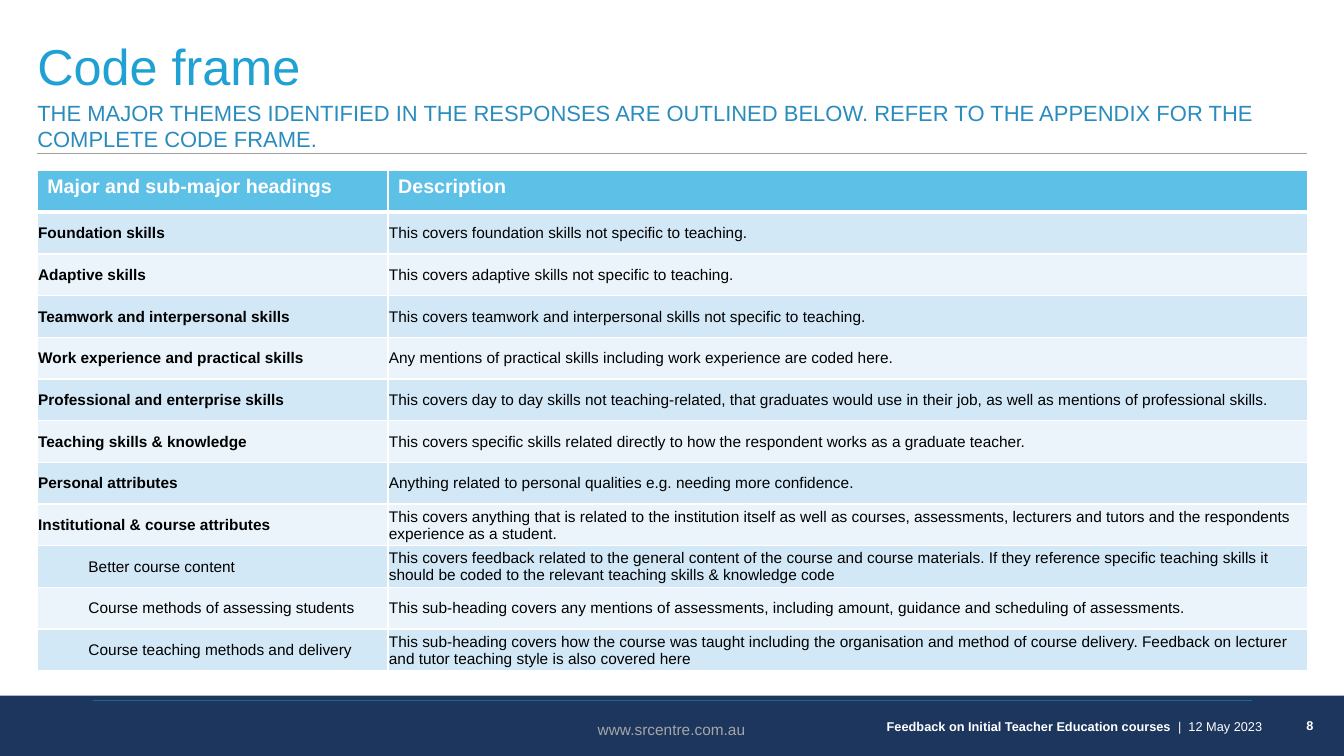
from dataclasses import dataclass

from lxml import etree
from pptx import Presentation
from pptx.dml.color import RGBColor
from pptx.enum import shapes, text
from pptx.oxml import ns
from pptx.util import Cm, Pt


@dataclass(frozen=True)
class Theme:
    font: str = "Arial"
    navy: str = "1C365E"
    teal: str = "156B8D"
    title: str = "1FA1D3"
    subtitle: str = "2A8CBE"
    header: str = "5CC0E7"
    bands: tuple[str, str] = ("D2E8F6", "EAF4FA")
    rule: str = "A0A0A0"
    web: str = "A6A6A6"
    white: str = "FFFFFF"
    black: str = "000000"
    title_pt: float = 36
    subtitle_pt: float = 15.7
    header_pt: float = 14
    body_pt: float = 11
    footer_pt: float = 9.1


@dataclass(frozen=True)
class Code:
    heading: str
    description: str
    sub: bool = False


@dataclass(frozen=True)
class Label:
    """Text box: position and size in cm, runs as (text, bold) pairs."""
    box: tuple[float, float, float, float]
    runs: tuple[tuple[str, bool], ...]
    size: float
    color: str
    align: text.PP_ALIGN = text.PP_ALIGN.LEFT
    anchor: text.MSO_ANCHOR = text.MSO_ANCHOR.MIDDLE
    inset: bool = False


@dataclass(frozen=True)
class Rule:
    left: float
    right: float
    y: float
    color: str


T = Theme()
LEFT, WIDTH = 0.94, 32.0
HEADING_WIDTH = 8.84
TABLE_TOP, ROW_HEIGHT = 4.3, 1.05
FOOTER_TOP = 17.53

LABELS = [
    Label((LEFT, 0.76, WIDTH, 1.75), (("Code frame", False),), T.title_pt, T.title),
    Label((LEFT, 2.51, WIDTH, 1.33),
          (("THE MAJOR THEMES IDENTIFIED IN THE RESPONSES ARE OUTLINED BELOW. "
            "REFER TO THE APPENDIX FOR THE COMPLETE CODE FRAME.", False),),
          T.subtitle_pt, T.subtitle, anchor=text.MSO_ANCHOR.BOTTOM),
    Label((11.53, 17.98, 20.62, 0.64),
          (("Feedback on Initial Teacher Education courses  ", True), ("|  12 May 2023 ", False)),
          T.footer_pt, T.white, text.PP_ALIGN.RIGHT, inset=True),
    Label((32.16, 17.65, 1.7, 1.27), (("8", True),), T.footer_pt, T.white, text.PP_ALIGN.CENTER),
    Label((12.62, 18.03, 8.61, 0.74), (("www.srcentre.com.au", False),), T.body_pt, T.web,
          text.PP_ALIGN.CENTER, text.MSO_ANCHOR.TOP, inset=True),
]
RULES = [
    Rule(2.34, 31.55, 17.65, T.teal),
    Rule(LEFT, LEFT + WIDTH, 3.86, T.rule),
]
CODES = [
    Code("Foundation skills", "This covers foundation skills not specific to teaching."),
    Code("Adaptive skills", "This covers adaptive skills not specific to teaching."),
    Code("Teamwork and interpersonal skills",
         "This covers teamwork and interpersonal skills not specific to teaching."),
    Code("Work experience and practical skills",
         "Any mentions of practical skills including work experience are coded here."),
    Code("Professional and enterprise skills",
         "This covers day to day skills not teaching-related, that graduates would use in "
         "their job, as well as mentions of professional skills."),
    Code("Teaching skills & knowledge",
         "This covers specific skills related directly to how the respondent works as a "
         "graduate teacher."),
    Code("Personal attributes",
         "Anything related to personal qualities e.g. needing more confidence."),
    Code("Institutional & course attributes",
         "This covers anything that is related to the institution itself as well as courses, "
         "assessments, lecturers and tutors and the respondents experience as a student."),
    Code("Better course content",
         "This covers feedback related to the general content of the course and course "
         "materials. If they reference specific teaching skills it should be coded to the "
         "relevant teaching skills & knowledge code", sub=True),
    Code("Course methods of assessing students",
         "This sub-heading covers any mentions of assessments, including amount, guidance and "
         "scheduling of assessments.", sub=True),
    Code("Course teaching methods and delivery",
         "This sub-heading covers how the course was taught including the organisation and "
         "method of course delivery. Feedback on lecturer and tutor teaching style is also "
         "covered here", sub=True),
]


def rgb(color: str) -> RGBColor:
    return RGBColor.from_string(color)


def set_font(font, size: float, color: str) -> None:
    font.name, font.size = T.font, Pt(size)
    font.color.rgb = rgb(color)


def add_footer_band(s) -> None:
    sp = s.shapes.add_shape(shapes.MSO_SHAPE.RECTANGLE, 0, Cm(FOOTER_TOP), Cm(33.87), Cm(1.52))
    sp.shadow.inherit = False
    sp.fill.solid()
    sp.fill.fore_color.rgb = rgb(T.navy)
    sp.line.fill.background()


def add_rule(s, rule: Rule) -> None:
    line = s.shapes.add_connector(shapes.MSO_CONNECTOR.STRAIGHT, Cm(rule.left), Cm(rule.y),
                                  Cm(rule.right), Cm(rule.y))
    line.line.color.rgb = rgb(rule.color)
    line.line.width = Pt(0.75)
    etree.SubElement(line._element.spPr, ns.qn("a:effectLst"))


def add_label(s, label: Label) -> None:
    tf = s.shapes.add_textbox(*map(Cm, label.box)).text_frame
    tf.word_wrap = True
    tf.vertical_anchor = label.anchor
    if not label.inset:
        tf.margin_left = tf.margin_top = tf.margin_right = tf.margin_bottom = 0
    p = tf.paragraphs[0]
    p.alignment = label.align
    set_font(p.font, label.size, label.color)
    for words, bold in label.runs:
        r = p.add_run()
        r.text, r.font.bold = words, bold


def set_borders(cell, top: float, bottom: float) -> None:
    """Draw white cell borders; must run before the cell is filled."""
    tc_pr = cell._tc.get_or_add_tcPr()
    for side, width in (("L", 1), ("R", 1), ("T", top), ("B", bottom)):
        ln = etree.SubElement(tc_pr, ns.qn(f"a:ln{side}"), w=str(Pt(width)))
        fill = etree.SubElement(ln, ns.qn("a:solidFill"))
        etree.SubElement(fill, ns.qn("a:srgbClr"), val=T.white)


def fill_cell(cell, words: str, row: int, bold: bool, indent: bool = False) -> None:
    is_header = row == 0
    set_borders(cell, top=3 if row == 1 else 1, bottom=3 if is_header else 1)
    cell.fill.solid()
    cell.fill.fore_color.rgb = rgb(T.header if is_header else T.bands[(row - 1) % 2])
    if not is_header:
        cell.vertical_anchor = text.MSO_ANCHOR.MIDDLE
        cell.margin_left = cell.margin_top = cell.margin_right = Cm(0.02)
        cell.margin_bottom = 0
    p = cell.text_frame.paragraphs[0]
    p.text = words
    if indent:
        p.level = 1
        p._p.get_or_add_pPr().set("marL", str(Cm(1.27)))
    p.font.bold = bold
    set_font(p.font, T.header_pt if is_header else T.body_pt, T.white if is_header else T.black)


def add_code_table(s) -> None:
    rows = len(CODES) + 1
    table = s.shapes.add_table(rows, 2, Cm(LEFT), Cm(TABLE_TOP), Cm(WIDTH),
                               Cm(rows * ROW_HEIGHT)).table
    table.columns[0].width = Cm(HEADING_WIDTH)
    table.columns[1].width = Cm(WIDTH - HEADING_WIDTH)
    for row in table.rows:
        row.height = Cm(ROW_HEIGHT)
    for col, words in enumerate(("Major and sub-major headings", "Description")):
        fill_cell(table.cell(0, col), words, 0, bold=True)
    for i, code in enumerate(CODES, 1):
        fill_cell(table.cell(i, 0), code.heading, i, bold=not code.sub, indent=code.sub)
        fill_cell(table.cell(i, 1), code.description, i, bold=False)


def main() -> None:
    prs = Presentation()
    prs.slide_width, prs.slide_height = Cm(33.87), Cm(19.05)
    s = prs.slides.add_slide(prs.slide_layouts[6])
    add_footer_band(s)
    for rule in RULES:
        add_rule(s, rule)
    for label in LABELS:
        add_label(s, label)
    add_code_table(s)
    prs.save("out.pptx")


if __name__ == "__main__":
    main()
